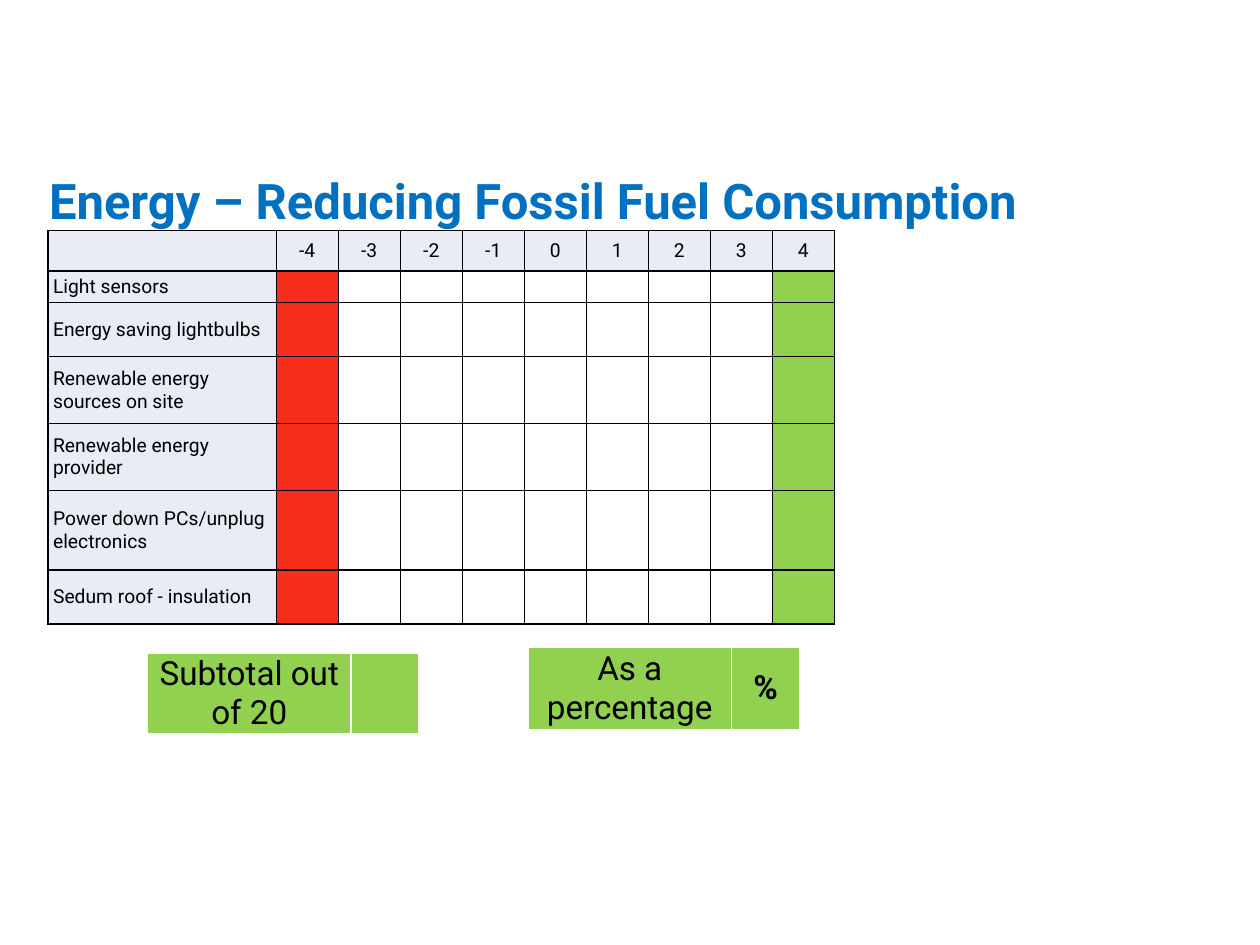
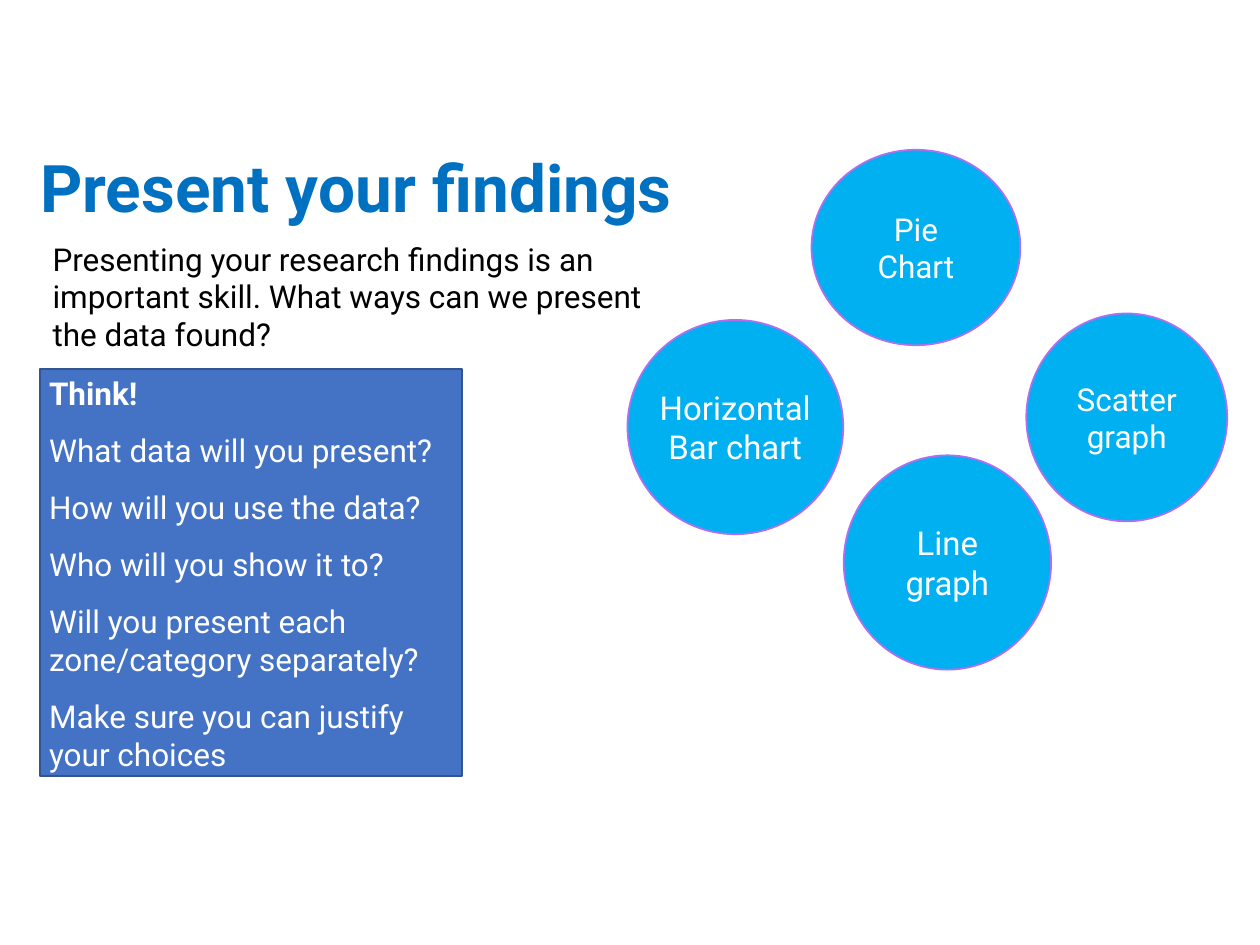
from dataclasses import dataclass

from lxml.etree import SubElement
from pptx import Presentation
from pptx.dml.color import RGBColor as Rgb
from pptx.enum.shapes import MSO_SHAPE as Shape
from pptx.enum.text import MSO_ANCHOR as Anchor, PP_ALIGN as Align
from pptx.oxml.ns import qn
from pptx.util import Cm, Pt


@dataclass(frozen=True)
class Theme:
    font: str = "Roboto"
    title: str = "0070C0"
    ink: str = "000000"
    white: str = "FFFFFF"
    label: str = "E9EBF5"
    low: str = "F72D1D"
    high: str = "92D050"
    panel: str = "4472C4"
    panel_line: str = "325491"
    bubble: str = "00B0F0"
    bubble_line: str = "B06FF1"
    small_title: float = 28
    large_title: float = 37.5
    body: float = 18
    large_body: float = 18.8
    total: float = 19
    cell: float = 11


THEME = Theme()


# Text
def add_span(para, text, size, color, bold=False):
    span = para.add_run()
    span.text = text
    font = span.font
    font.name, font.size, font.bold = THEME.font, Pt(size), bold
    font.color.rgb = Rgb.from_string(color)


def set_frame(frame, anchor, inset_x, inset_y):
    frame.word_wrap = True
    frame.vertical_anchor = anchor
    frame.margin_left = frame.margin_right = Cm(inset_x)
    frame.margin_top = frame.margin_bottom = Cm(inset_y)


def add_text(page, place, text, size, color, bold=False, anchor=Anchor.TOP,
             insets=(0.25, 0.13), line_spacing=1.0):
    box = page.shapes.add_textbox(*map(Cm, place))
    set_frame(box.text_frame, anchor, *insets)
    para = box.text_frame.paragraphs[0]
    para.line_spacing = line_spacing
    add_span(para, text, size, color, bold)


def add_title(page, place, text, size, **layout):
    add_text(page, place, text, size, THEME.title, bold=True, line_spacing=0.9, **layout)


# Filled shapes
def add_filled(page, kind, place, fill, line):
    shape = page.shapes.add_shape(kind, *map(Cm, place))
    shape.shadow.inherit = False
    shape.fill.solid()
    shape.fill.fore_color.rgb = Rgb.from_string(fill)
    shape.line.color.rgb = Rgb.from_string(line)
    shape.line.width = Pt(1)
    return shape


def add_bubble(page, place, text, size, insets):
    bubble = add_filled(page, Shape.OVAL, place, THEME.bubble, THEME.bubble_line)
    set_frame(bubble.text_frame, Anchor.MIDDLE, *insets)
    para = bubble.text_frame.paragraphs[0]
    para.alignment = Align.CENTER
    add_span(para, text, size, THEME.white)


def add_panel(page, place, heading, questions):
    panel = add_filled(page, Shape.RECTANGLE, place, THEME.panel, THEME.panel_line)
    frame = panel.text_frame
    set_frame(frame, Anchor.TOP, 0.18, 0.1)
    for index, text in enumerate([heading, *questions]):
        para = frame.add_paragraph() if index else frame.paragraphs[0]
        para.alignment = Align.LEFT
        if index:
            para.space_before = Pt(11)
        add_span(para, text, THEME.body, THEME.white, bold=index == 0)


# Tables
def add_grid(page, left, top, widths, heights):
    holder = page.shapes.add_table(len(heights), len(widths), Cm(left), Cm(top),
                                   Cm(sum(widths)), Cm(sum(heights)))
    table = holder.table
    table.first_row = table.horz_banding = False
    for column, width in zip(table.columns, widths):
        column.width = Cm(width)
    for row, height in zip(table.rows, heights):
        row.height = Cm(height)
    return table


def set_borders(cell, color):
    props = cell._tc.get_or_add_tcPr()
    for side in ("lnL", "lnR", "lnT", "lnB"):
        line = SubElement(props, qn(f"a:{side}"), w=str(Pt(1)))
        SubElement(SubElement(line, qn("a:solidFill")), qn("a:srgbClr"), val=color)


def fill_cell(cell, text, size, fill, border, insets, align=Align.CENTER, bold=False):
    set_borders(cell, border)
    cell.vertical_anchor = Anchor.MIDDLE
    cell.margin_left = cell.margin_right = Cm(insets[0])
    cell.margin_top = cell.margin_bottom = Cm(insets[1])
    if fill:
        cell.fill.solid()
        cell.fill.fore_color.rgb = Rgb.from_string(fill)
    else:
        cell.fill.background()
    para = cell.text_frame.paragraphs[0]
    para.alignment = align
    if text:
        add_span(para, text, size, THEME.ink, bold)
    else:
        # Keeps an empty cell from stretching its row
        SubElement(para._p, qn("a:endParaRPr"), sz=str(size * 100))


def add_score_table(page, left, top, measures, heights):
    scores = range(-4, 5)
    table = add_grid(page, left, top, [4.6] + [1.25] * len(scores), heights)
    score_fills = {scores[0]: THEME.low, scores[-1]: THEME.high}
    style = dict(size=THEME.cell, border=THEME.ink, insets=(0.1, 0.05))

    for row, measure in enumerate(["", *measures]):
        fill_cell(table.cell(row, 0), measure, fill=THEME.label, align=Align.LEFT, **style)
        for column, score in enumerate(scores, start=1):
            text = "" if row else str(score)
            fill = score_fills.get(score) if row else THEME.label
            fill_cell(table.cell(row, column), text, fill=fill, **style)


def add_total_table(page, left, top, widths, height, label, unit=""):
    table = add_grid(page, left, top, widths, [height])
    last = len(widths) - 1
    texts = {0: label, last: unit}
    for column in range(len(widths)):
        fill_cell(table.cell(0, column), texts.get(column, ""), THEME.total, THEME.high,
                  THEME.white, (0.03, 0.01), bold=column == last)
    if last > 1:
        table.cell(0, 0).merge(table.cell(0, last - 1))


# Slides
def build_energy_page(page):
    add_title(page, (0.81, 3.48, 21.67, 1.17), "Energy – Reducing Fossil Fuel Consumption",
              THEME.small_title, insets=(0.18, 0.1))
    add_total_table(page, 2.97, 13.16, [1.37] * 4, 1.58, "Subtotal out of 20")
    add_score_table(
        page, 0.97, 4.65,
        ["Light sensors", "Energy saving lightbulbs", "Renewable energy sources on site",
         "Renewable energy provider", "Power down PCs/unplug electronics",
         "Sedum roof - insulation"],
        [0.81, 0.64, 1.09, 1.35, 1.35, 1.6, 1.09])
    add_total_table(page, 10.64, 13.04, [4.11, 1.37], 1.68, "As a percentage", "%")


def build_findings_page(page):
    add_title(page, (0.56, 2.87, 21.59, 1.83), "Present your findings",
              THEME.large_title, anchor=Anchor.BOTTOM)
    add_text(page, (0.81, 4.7, 12.75, 2.57),
             "Presenting your research findings is an important skill. "
             "What ways can we present the data found?", THEME.body, THEME.ink)
    add_panel(page, (0.81, 7.44, 8.51, 8.2), "Think!", [
        "What data will you present?",
        "How will you use the data?",
        "Who will you show it to?",
        "Will you present each zone/category separately?",
        "Make sure you can justify your choices",
    ])

    # Ways to show the data
    large, regular = (THEME.large_body, (0, 0)), (THEME.body, (0.25, 0.1))
    for text, place, style in (
        ("Horizontal Bar chart", (12.65, 6.45, 4.35, 4.32), large),
        ("Pie Chart", (16.36, 3.02, 4.21, 3.94), regular),
        ("Scatter graph", (20.69, 6.32, 4.05, 4.19), regular),
        ("Line graph", (17.01, 9.18, 4.18, 4.32), large),
    ):
        add_bubble(page, place, text, *style)


def main():
    deck = Presentation()
    deck.slide_width, deck.slide_height = Cm(25.4), Cm(19.05)
    blank = deck.slide_layouts[6]
    for build in (build_energy_page, build_findings_page):
        build(deck.slides.add_slide(blank))
    deck.save("out.pptx")


if __name__ == "__main__":
    main()
